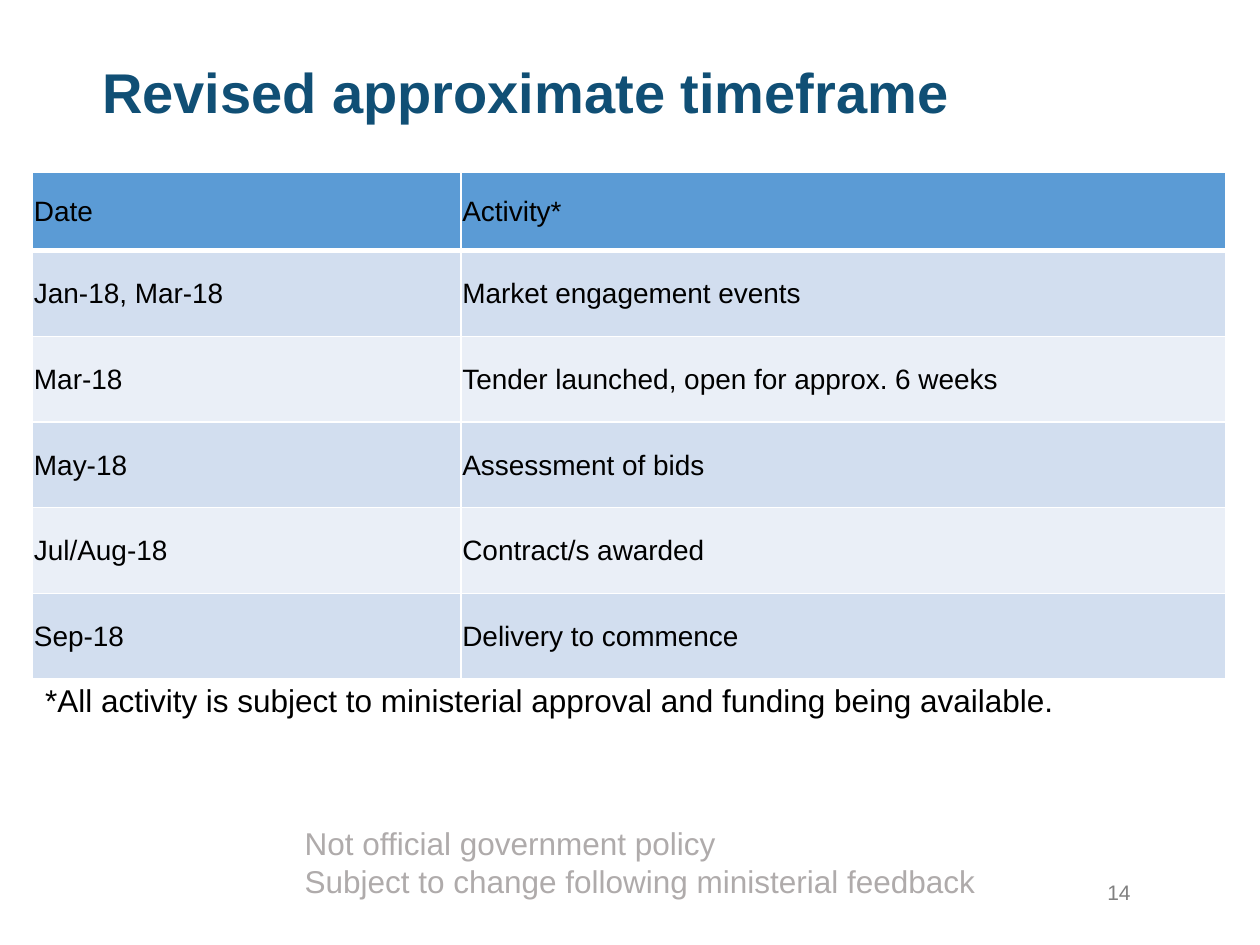
from lxml import etree
from pptx import Presentation
from pptx.dml.color import RGBColor
from pptx.enum.shapes import MSO_SHAPE
from pptx.enum.text import MSO_ANCHOR, MSO_AUTO_SIZE, PP_ALIGN
from pptx.oxml.ns import qn
from pptx.util import Inches, Pt

LEFT = PP_ALIGN.LEFT
TOP, MIDDLE = MSO_ANCHOR.TOP, MSO_ANCHOR.MIDDLE
NO_FIT = MSO_AUTO_SIZE.NONE

# Content
TITLE = "Revised approximate timeframe"
SCHEDULE = [
    ("Date", "Activity*"),
    ("Jan-18, Mar-18", "Market engagement events"),
    ("Mar-18", "Tender launched, open for approx. 6 weeks"),
    ("May-18", "Assessment of bids"),
    ("Jul/Aug-18", "Contract/s awarded"),
    ("Sep-18", "Delivery to commence"),
]
FOOTNOTE = "*All activity is subject to ministerial approval and funding being available."
DISCLAIMER = ["Not official government policy",
              "Subject to change following ministerial feedback"]
PAGE_NUMBER = "14"

# Style and grid, in inches
FONT = "Arial"
COLORS = {"title": "104F75", "text": "000000", "disclaimer": "AFABAB",
          "number": "808080", "white": "FFFFFF", "header": "5B9BD5",
          "band_dark": "D2DEEF", "band_light": "EAEFF7"}
TABLE_LEFT, TABLE_TOP = 0.26, 1.37
COLUMN_WIDTHS = [3.4, 6.07]
HEADER_HEIGHT, ROW_HEIGHT = 0.62, 0.68


def color(name):
    return RGBColor.from_string(COLORS[name])


def write(frame, lines, size, color_name, bold=False):
    frame.text = "\n".join(lines)
    for para in frame.paragraphs:
        para.alignment = LEFT
        for span in para.runs:
            span.font.name, span.font.size = FONT, Pt(size)
            span.font.bold = bold
            span.font.color.rgb = color(color_name)


def add_text(page, area, lines, size, color_name):
    box = page.shapes.add_textbox(*map(Inches, area))
    box.text_frame.word_wrap = True
    write(box.text_frame, lines, size, color_name)


def add_borders(cell, bottom_width):
    properties = cell._tc.get_or_add_tcPr()
    for side, width in (("L", 1), ("R", 1), ("T", 1), ("B", bottom_width)):
        line = etree.SubElement(properties, qn(f"a:ln{side}"), w=str(Pt(width)))
        fill = etree.SubElement(line, qn("a:solidFill"))
        etree.SubElement(fill, qn("a:srgbClr"), val=COLORS["white"])


def add_schedule(page):
    heights = [HEADER_HEIGHT] + [ROW_HEIGHT] * (len(SCHEDULE) - 1)
    area = (TABLE_LEFT, TABLE_TOP, sum(COLUMN_WIDTHS), sum(heights))
    table = page.shapes.add_table(len(SCHEDULE), len(COLUMN_WIDTHS),
                                  *map(Inches, area)).table
    for column, width in zip(table.columns, COLUMN_WIDTHS):
        column.width = Inches(width)
    for index, (entries, height) in enumerate(zip(SCHEDULE, heights)):
        table.rows[index].height = Inches(height)
        band = "band_dark" if index % 2 else "band_light"
        for cell, entry in zip(table.rows[index].cells, entries):
            cell.margin_left = cell.margin_top = cell.margin_right = Inches(0.01)
            cell.margin_bottom = 0
            cell.vertical_anchor = MIDDLE
            write(cell.text_frame, [entry], 16, "text")
            add_borders(cell, 1 if index else 3)
            cell.fill.solid()
            cell.fill.fore_color.rgb = color(band if index else "header")


def main():
    deck = Presentation()
    deck.slide_width, deck.slide_height = Inches(10), Inches(7.5)
    page = deck.slides.add_slide(deck.slide_layouts[5])

    # Title
    title = page.shapes.title
    title.left, title.top, title.width, title.height = map(
        Inches, (0.71, 0.36, 8.83, 0.79))
    frame = title.text_frame
    frame.auto_size, frame.vertical_anchor = NO_FIT, TOP
    frame.margin_top = Inches(0.1)
    write(frame, [TITLE], 32, "title", bold=True)

    # Disclaimer at the foot
    add_text(page, (2.32, 6.49, 6.14, 0.71), DISCLAIMER, 18, "disclaimer")

    # Footnote, tucked behind the table's lower edge
    note = page.shapes.add_shape(MSO_SHAPE.RECTANGLE,
                                 *map(Inches, (TABLE_LEFT, 5.36, 8.54, 0.4)))
    note.shadow.inherit = False
    note.fill.solid()
    note.fill.fore_color.rgb = color("white")
    note.line.fill.background()
    note.text_frame.word_wrap = True
    note.text_frame.vertical_anchor = TOP
    write(note.text_frame, [FOOTNOTE], 18, "text")

    # Timeframe table and page number
    add_schedule(page)
    add_text(page, (8.69, 6.93, 0.56, 0.4), [PAGE_NUMBER], 12, "number")

    deck.save("out.pptx")


if __name__ == "__main__":
    main()
